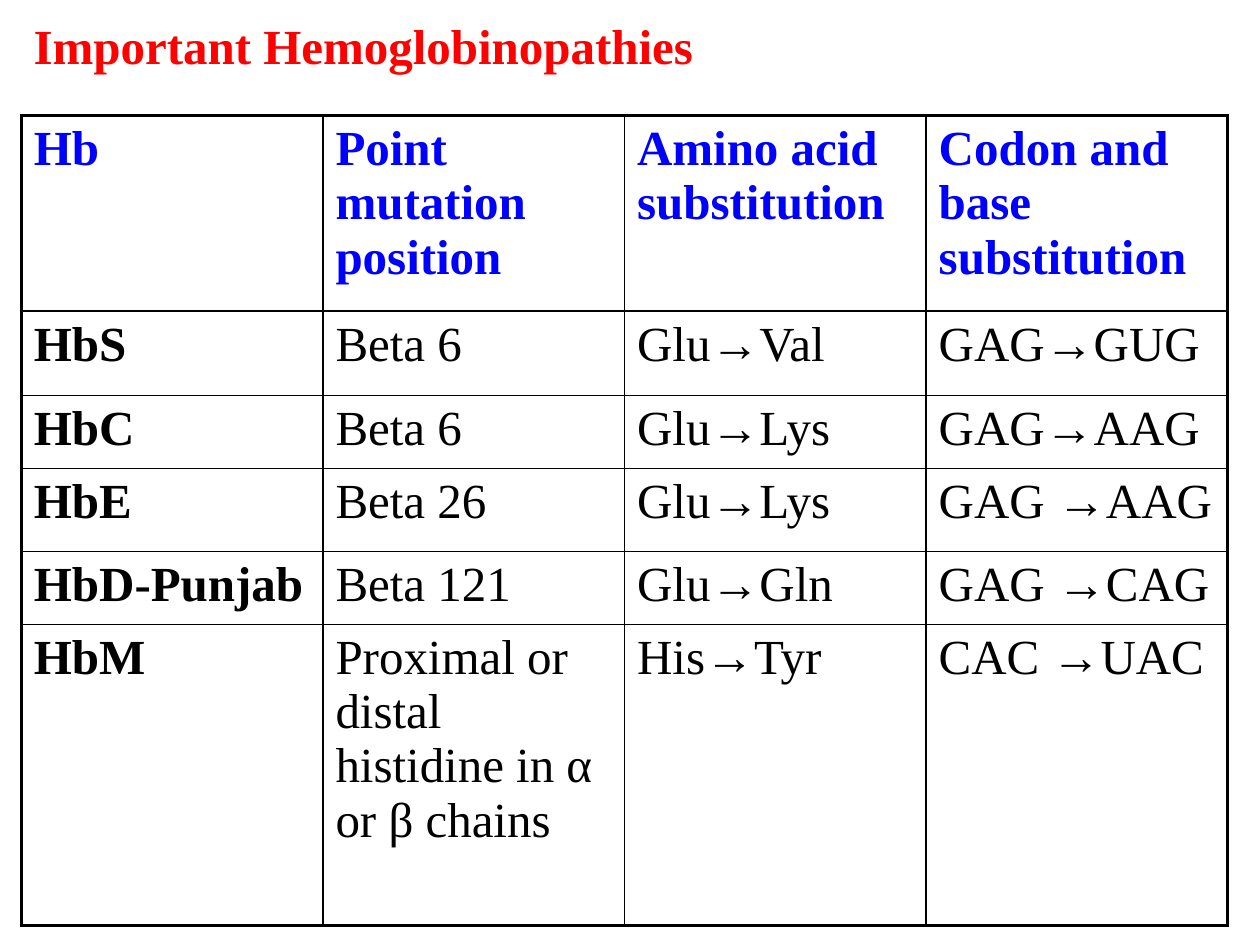
import dataclasses

import lxml.etree
import pptx
import pptx.dml.color
import pptx.enum.text
import pptx.oxml.ns
import pptx.util

Cm = pptx.util.Cm
qn = pptx.oxml.ns.qn


@dataclasses.dataclass(frozen=True)
class Theme:
    font: str = "Times New Roman"
    size: int = 28
    title: str = "FF0000"
    header: str = "0000FF"
    ink: str = "000000"
    outer_line: float = 2.25
    inner_line: float = 1


THEME = Theme()

HEADINGS = ("Hb", "Point mutation position", "Amino acid substitution",
            "Codon and base substitution")
VARIANTS = (
    ("HbS", "Beta 6", "Glu→Val", "GAG→GUG"),
    ("HbC", "Beta 6", "Glu→Lys", "GAG→AAG"),
    ("HbE", "Beta 26", "Glu→Lys", "GAG →AAG"),
    ("HbD-Punjab", "Beta 121", "Glu→Gln", "GAG →CAG"),
    ("HbM", "Proximal or distal histidine in α or β chains",
     "His→Tyr", "CAC →UAC"),
)
COLUMN_WIDTH = 6.08
ROW_HEIGHTS = (3.94, 1.7, 1.47, 1.68, 1.47, 6.07)


def write_text(frame, text, *, color=THEME.ink, bold=False):
    """Put one formatted paragraph in a text frame."""
    frame.word_wrap = True
    paragraph = frame.paragraphs[0]
    run = paragraph.add_run()
    run.text = text
    run.font.name = THEME.font
    run.font.size = pptx.util.Pt(THEME.size)
    run.font.bold = bold
    run.font.color.rgb = pptx.dml.color.RGBColor.from_string(color)


def set_borders(cell, outer_sides):
    """Draw all four sides, heavier where the side is on the table's edge."""
    properties = cell._tc.get_or_add_tcPr()
    for side in "LRTB":
        width = THEME.outer_line if side in outer_sides else THEME.inner_line
        line = lxml.etree.SubElement(properties, qn(f"a:ln{side}"),
                                     w=str(pptx.util.Pt(width)))
        fill = lxml.etree.SubElement(line, qn("a:solidFill"))
        lxml.etree.SubElement(fill, qn("a:srgbClr"), val=THEME.ink)


def add_title(slide, text):
    title = slide.shapes.add_textbox(Cm(0.43), Cm(0.18), Cm(19.25), Cm(1.45))
    title.text_frame.vertical_anchor = pptx.enum.text.MSO_ANCHOR.MIDDLE
    write_text(title.text_frame, text, color=THEME.title, bold=True)


def add_variant_table(slide):
    rows = (HEADINGS, *VARIANTS)
    last_row, last_column = len(rows) - 1, len(HEADINGS) - 1
    table = slide.shapes.add_table(
        len(rows), len(HEADINGS), Cm(0.43), Cm(2.33),
        Cm(COLUMN_WIDTH * len(HEADINGS)), Cm(sum(ROW_HEIGHTS))).table
    table.first_row = table.horz_banding = False

    for column in table.columns:
        column.width = Cm(COLUMN_WIDTH)
    for row, height in zip(table.rows, ROW_HEIGHTS):
        row.height = Cm(height)

    for r, texts in enumerate(rows):
        for c, text in enumerate(texts):
            cell = table.cell(r, c)
            edges = {"L": c == 0, "R": c == last_column,
                     "T": r == 0, "B": r == last_row}
            set_borders(cell, [side for side, on_edge in edges.items() if on_edge])
            cell.fill.background()
            write_text(cell.text_frame, text, bold=r == 0 or c == 0,
                       color=THEME.header if r == 0 else THEME.ink)


def main():
    deck = pptx.Presentation()
    deck.slide_width, deck.slide_height = Cm(25.4), Cm(19.05)
    slide = deck.slides.add_slide(deck.slide_layouts[6])

    # Heading
    add_title(slide, "Important Hemoglobinopathies")
    # Hemoglobin variants and their mutations
    add_variant_table(slide)

    deck.save("out.pptx")


if __name__ == "__main__":
    main()
